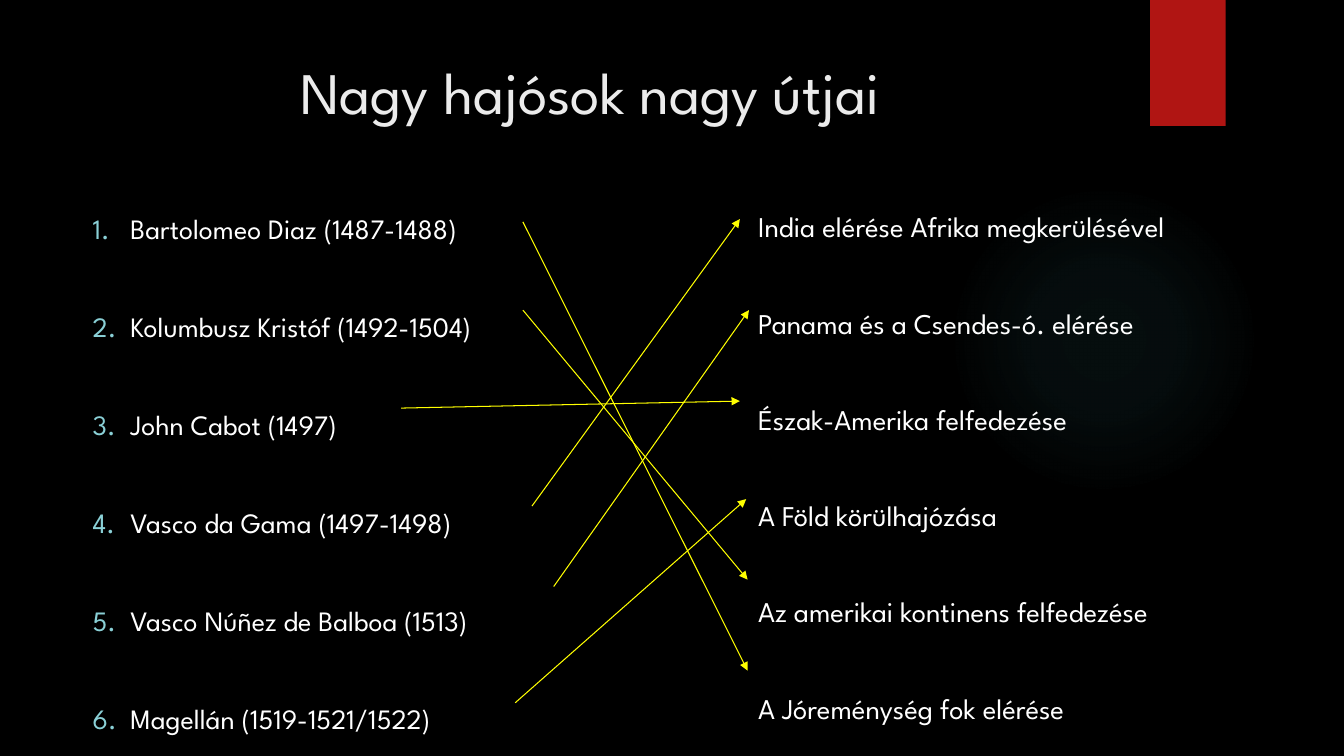
import pptx
import pptx.util
import pptx.oxml
import pptx.oxml.ns
import pptx.dml.color
import pptx.enum.shapes
import pptx.enum.text
from lxml import etree

Pt = pptx.util.Pt
FONT = "League Spartan"
qn = pptx.oxml.ns.qn


def color(value):
    return pptx.dml.color.RGBColor.from_string(value)


def style(para, size, value):
    para.font.name = FONT
    para.font.size = Pt(size)
    para.font.color.rgb = color(value)


deck = pptx.Presentation()
deck.slide_width = Pt(960)
deck.slide_height = Pt(540)
page = deck.slides.add_slide(deck.slide_layouts[3])
page.background.fill.solid()
page.background.fill.fore_color.rgb = color("000000")

shapes = pptx.enum.shapes.MSO_SHAPE
glow = page.shapes.add_shape(shapes.OVAL, Pt(677.5), Pt(131.75), Pt(221.75), Pt(221.75))
ribbon = page.shapes.add_shape(shapes.RECTANGLE, Pt(821.5), Pt(0), Pt(54), Pt(90))
ribbon.fill.solid()
ribbon.fill.fore_color.rgb = color("B01513")
glow.fill.background()
stops = "".join(
    f'<a:gs pos="{position * 1000}"><a:srgbClr val="50B9C1">'
    f'<a:alpha val="{alpha * 1000}"/></a:srgbClr></a:gs>'
    for position, alpha in [(0, 7), (36, 6), (69, 0)]
)
gradient = pptx.oxml.parse_xml(
    f'<a:gradFill {pptx.oxml.ns.nsdecls("a")}><a:gsLst>{stops}</a:gsLst>'
    '<a:path path="circle"><a:fillToRect l="50000" t="50000" r="50000" b="50000"/>'
    '</a:path></a:gradFill>'
)
properties = glow._element.spPr
properties.replace(properties.find(qn("a:noFill")), gradient)
for index, decoration in enumerate([glow, ribbon]):
    decoration.shadow.inherit = False
    decoration.line.fill.background()
    page.shapes._spTree.insert(2 + index, decoration._element)

title = page.shapes.title
title.left, title.top, title.width, title.height = Pt(51), Pt(36), Pt(741), Pt(110)
title.text_frame.text = "Nagy hajósok nagy útjai"
title.text_frame.vertical_anchor = pptx.enum.text.MSO_ANCHOR.TOP
title.text_frame.auto_size = pptx.enum.text.MSO_AUTO_SIZE.NONE
heading = title.text_frame.paragraphs[0]
heading.alignment = pptx.enum.text.PP_ALIGN.CENTER
style(heading, 42, "EBEBEB")

sailors = [
    "Bartolomeo Diaz (1487-1488)",
    "Kolumbusz Kristóf (1492-1504)",
    "John Cabot (1497)",
    "Vasco da Gama (1497-1498)",
    "Vasco Núñez de Balboa (1513)",
    "Magellán (1519-1521/1522)",
]
voyages = [
    "India elérése Afrika megkerülésével",
    "Panama és a Csendes-ó. elérése",
    "Észak-Amerika felfedezése",
    "A Föld körülhajózása",
    "Az amerikai kontinens felfedezése",
    "A Jóreménység fok elérése",
]
columns = [
    (1, sailors, 59, 401, 20, 2.5, True),
    (2, voyages, 534.25, 385, 20.4, 2.4, False),
]
for holder, entries, left, width, size, spacing, numbered in columns:
    box = page.placeholders[holder]
    box.left, box.top, box.width, box.height = Pt(left), Pt(111.6), Pt(width), Pt(406.8)
    box.text_frame.text = "\n".join(entries)
    box.text_frame.auto_size = pptx.enum.text.MSO_AUTO_SIZE.NONE
    for index, para in enumerate(box.text_frame.paragraphs):
        para.line_spacing = spacing
        para.space_before = Pt(10 if index else 0)
        layout = para._p.get_or_add_pPr()
        indent = Pt(27) if numbered else 0
        layout.set("marL", str(indent))
        layout.set("indent", str(-indent))
        if numbered:
            tint = etree.SubElement(layout, qn("a:buClr"))
            etree.SubElement(tint, qn("a:srgbClr"), val="8AD0D6")
            etree.SubElement(layout, qn("a:buFont"), typeface=FONT)
            etree.SubElement(layout, qn("a:buAutoNum"), type="arabicPeriod")
        else:
            etree.SubElement(layout, qn("a:buNone"))
        style(para, size, "FFFFFF")

matches = [
    (373.5, 158.5, 534, 479),
    (373.5, 221.5, 534, 414),
    (380, 361.5, 528.5, 156.5),
    (395.5, 419, 535, 221.5),
    (368, 502, 533, 356.5),
    (286.5, 291.5, 528.5, 286.5),
]
for points in matches:
    arrow = page.shapes.add_connector(
        pptx.enum.shapes.MSO_CONNECTOR.STRAIGHT, *[Pt(point) for point in points]
    )
    arrow.line.color.rgb = color("FFFF00")
    arrow.line.width = Pt(0.75)
    etree.SubElement(arrow.line._get_or_add_ln(), qn("a:tailEnd"), type="triangle")
    etree.SubElement(arrow._element.spPr, qn("a:effectLst"))

deck.save("out.pptx")
